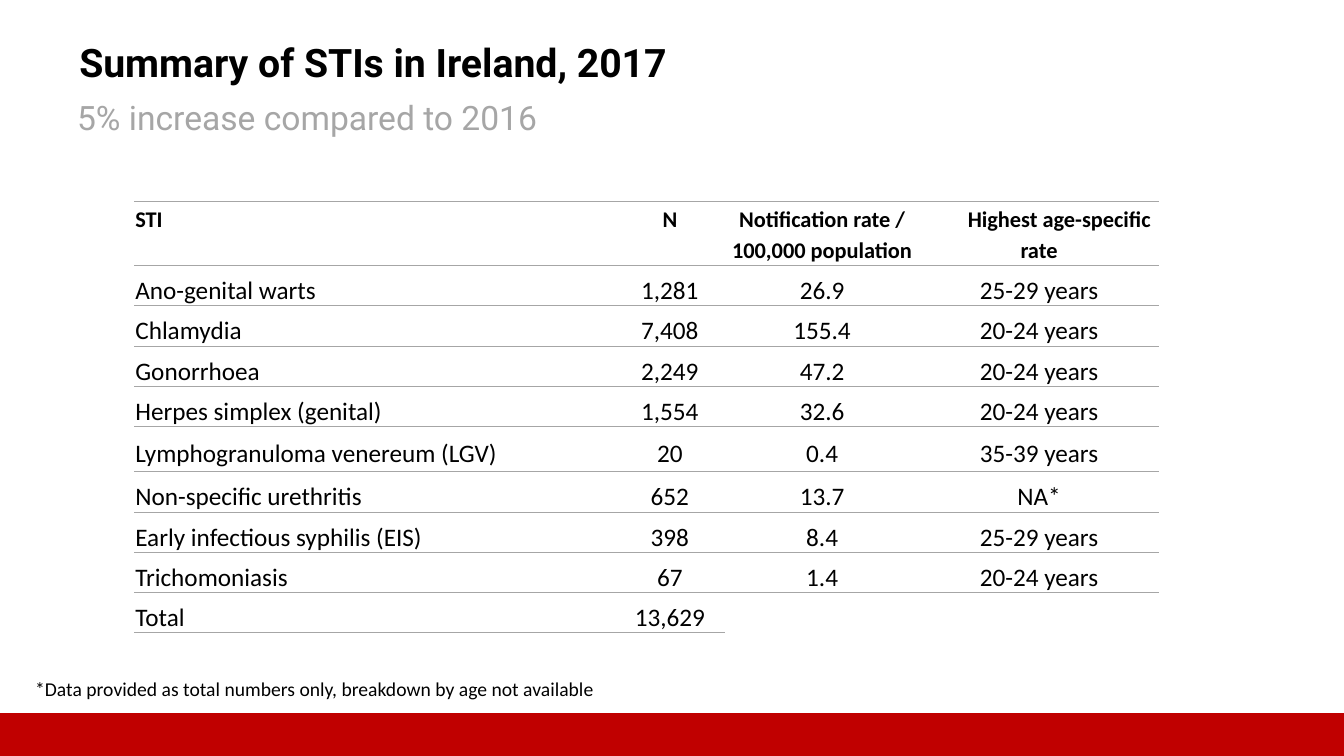
import pptx
import pptx.dml.color
import pptx.enum.shapes
import pptx.enum.text
import pptx.oxml
import pptx.oxml.ns
import pptx.util

Pt = pptx.util.Pt
ALIGN = pptx.enum.text.PP_ALIGN
ANCHOR = pptx.enum.text.MSO_ANCHOR

RED, GREY, BLACK = "C00000", "A6A6A6", "000000"

TEXTS = [
    ("Summary of STIs in Ireland, 2017", (48, 21.6, 744, 44.6), (8.64, 4.32),
     ANCHOR.MIDDLE, dict(size=Pt(28), name="Roboto", bold=True), BLACK),
    ("5% increase compared to 2016", (48, 65.5, 366, 36), (7.2, 3.6),
     ANCHOR.TOP, dict(size=Pt(24), name="Roboto"), GREY),
    ("*Data provided as total numbers only, breakdown by age not available",
     (18, 480.2, 444, 24.5), (7.2, 3.6),
     ANCHOR.TOP, dict(size=Pt(14), name="Calibri"), BLACK),
]

ROWS = [
    ("STI", "N", "Notification rate / 100,000 population", "Highest age-specific rate"),
    ("Ano-genital warts", "1,281", "26.9", "25-29 years"),
    ("Chlamydia", "7,408", "155.4", "20-24 years"),
    ("Gonorrhoea", "2,249", "47.2", "20-24 years"),
    ("Herpes simplex (genital)", "1,554", "32.6", "20-24 years"),
    ("Lymphogranuloma venereum (LGV)", "20", "0.4", "35-39 years"),
    ("Non-specific urethritis", "652", "13.7", "NA*"),
    ("Early infectious syphilis (EIS)", "398", "8.4", "25-29 years"),
    ("Trichomoniasis", "67", "1.4", "20-24 years"),
    ("Total", "13,629", "", ""),
]
COL_WIDTHS = [343, 79, 138.5, 171.5]
ROW_HEIGHTS = [45.5, 25.2, 25.2, 25.2, 25.2, 32.4, 25.2, 25.2, 26.5, 26.5]
TABLE_LEFT, TABLE_TOP = 96, 144
HEADER_FONT = dict(size=Pt(16), name="Calibri", bold=True)
BODY_FONT = dict(size=Pt(18), name="Calibri", bold=False)
LAST_HEADER_INDENT = 29


def rgb(color):
    return pptx.dml.color.RGBColor.from_string(color)


def apply(obj, values):
    for key, value in values.items():
        setattr(obj, key, value)


def add_run(p, text, font, color):
    r = p.add_run()
    r.text = text
    apply(r.font, font)
    r.font.color.rgb = rgb(color)


def set_border(cell, side, width):
    fill = f'<a:solidFill><a:srgbClr val="{GREY}"/></a:solidFill>' if width else "<a:noFill/>"
    cell._tc.get_or_add_tcPr().append(pptx.oxml.parse_xml(
        f'<a:ln{side} {pptx.oxml.ns.nsdecls("a")} w="{Pt(width)}">{fill}</a:ln{side}>'))


def add_text(s, text, box, insets, anchor, font, color):
    tf = s.shapes.add_textbox(*map(Pt, box)).text_frame
    side, end = map(Pt, insets)
    apply(tf, dict(word_wrap=True, vertical_anchor=anchor, margin_left=side,
                   margin_right=side, margin_top=end, margin_bottom=end))
    add_run(tf.paragraphs[0], text, font, color)


def fill_cell(cell, text, row, col):
    header, total = row == 0, row == len(ROWS) - 1
    apply(cell, dict(margin_left=Pt(0.7), margin_right=Pt(0.7), margin_top=Pt(0.7),
                     margin_bottom=0,
                     vertical_anchor=ANCHOR.TOP if header else ANCHOR.MIDDLE))
    top = 1 if row < 2 else 0.5
    bottom = 1 if header or total else 0.5
    if not text:
        bottom = 0
    for side, width in zip("LRTB", (0, 0, top, bottom)):
        set_border(cell, side, width)
    cell.fill.background()
    if not text:
        return
    p = cell.text_frame.paragraphs[0]
    apply(p, dict(alignment=ALIGN.CENTER if col else ALIGN.LEFT,
                  line_spacing=1.14 if header else 1.3))
    if header and col == len(COL_WIDTHS) - 1:
        p._p.get_or_add_pPr().set("indent", str(Pt(LAST_HEADER_INDENT)))
    add_run(p, text, HEADER_FONT if header else BODY_FONT, BLACK)


def add_sti_table(s):
    table = s.shapes.add_table(
        len(ROWS), len(COL_WIDTHS), Pt(TABLE_LEFT), Pt(TABLE_TOP),
        Pt(sum(COL_WIDTHS)), Pt(sum(ROW_HEIGHTS))).table
    apply(table, dict(first_row=False, horz_banding=False))
    for column, width in zip(table.columns, COL_WIDTHS):
        column.width = Pt(width)
    for i, (height, texts) in enumerate(zip(ROW_HEIGHTS, ROWS)):
        table.rows[i].height = Pt(height)
        for j, text in enumerate(texts):
            fill_cell(table.cell(i, j), text, i, j)


def main():
    prs = pptx.Presentation()
    apply(prs, dict(slide_width=Pt(960), slide_height=Pt(540)))
    s = prs.slides.add_slide(prs.slide_layouts[6])

    sp = s.shapes.add_shape(pptx.enum.shapes.MSO_SHAPE.RECTANGLE,
                            0, Pt(510), Pt(960), Pt(30))
    sp.shadow.inherit = False
    sp.fill.solid()
    sp.fill.fore_color.rgb = rgb(RED)
    sp.line.color.rgb = rgb(RED)
    sp.line.width = Pt(2)

    title, subtitle, footnote = TEXTS
    add_text(s, *title)
    add_text(s, *subtitle)
    add_sti_table(s)
    add_text(s, *footnote)
    prs.save("out.pptx")


if __name__ == "__main__":
    main()
